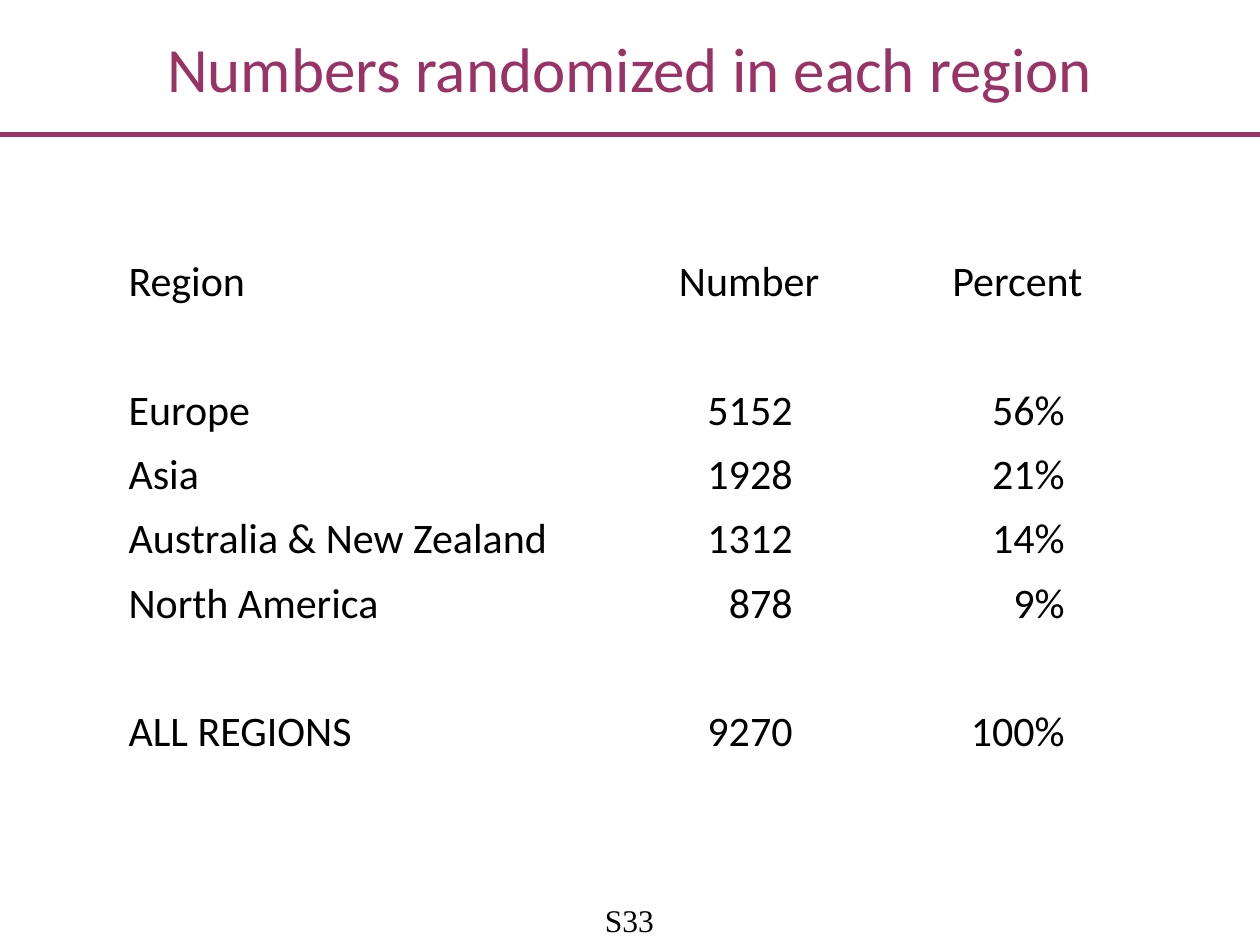
from pptx import Presentation
from pptx import util as u
from pptx.dml.color import RGBColor
from pptx.enum import shapes, text
from pptx.oxml.ns import qn
from lxml import etree

TITLE = "Numbers randomized in each region"
PAGE = "S33"
ROWS = [
    ("Region", "Number", "Percent"),
    ("", "", ""),
    ("Europe", "5152", "56%"),
    ("Asia", "1928", "21%"),
    ("Australia & New Zealand", "1312", "14%"),
    ("North America", "878", "9%"),
    ("", "", ""),
    ("ALL REGIONS", "9270", "100%"),
]
COLUMNS = [3.96, 2.13, 2.13]
RIGHT_MARGINS = [0.1, 0.72, 0.69]
COLORS = {"accent": "993366", "text": "000000"}
W, H = 10, 7.5
HEADER_H = 1.07
TABLE_LEFT, TABLE_TOP, ROW_H = 0.92, 1.99, 0.51
ALIGN = text.PP_ALIGN


def add_run(p, content, size, font, color, align):
    p.alignment = align
    r = p.add_run()
    r.text = content
    r.font.size = u.Pt(size)
    r.font.name = font
    r.font.bold = False
    r.font.color.rgb = RGBColor.from_string(COLORS[color])


def add_label(s, box, content, size, font, color, wrap, margin):
    sp = s.shapes.add_textbox(*[u.Inches(v) for v in box])
    tf = sp.text_frame
    tf.word_wrap = wrap
    tf.vertical_anchor = text.MSO_ANCHOR.MIDDLE
    tf.margin_left = tf.margin_right = u.Inches(margin)
    tf.margin_top = tf.margin_bottom = u.Inches(margin / 2)
    add_run(tf.paragraphs[0], content, size, font, color, ALIGN.CENTER)


def add_rule(s):
    line = s.shapes.add_connector(
        shapes.MSO_CONNECTOR.STRAIGHT,
        0, u.Inches(HEADER_H), u.Inches(W), u.Inches(HEADER_H))
    line.line.color.rgb = RGBColor.from_string(COLORS["accent"])
    line.line.width = u.Pt(3)
    etree.SubElement(line._element.spPr, qn("a:effectLst"))


def add_regions(s):
    table = s.shapes.add_table(
        len(ROWS), len(COLUMNS), u.Inches(TABLE_LEFT), u.Inches(TABLE_TOP),
        u.Inches(sum(COLUMNS)), u.Inches(ROW_H * len(ROWS))).table
    table.first_row = table.horz_banding = False
    for column, width in zip(table.columns, COLUMNS):
        column.width = u.Inches(width)
    for i, row in enumerate(ROWS):
        table.rows[i].height = u.Inches(ROW_H)
        for j, value in enumerate(row):
            cell = table.cell(i, j)
            cell.fill.background()
            p = cell.text_frame.paragraphs[0]
            if not value:
                p.font.size = u.Pt(24)
                continue
            align = ALIGN.LEFT
            if j:
                align = ALIGN.RIGHT if i else ALIGN.CENTER
            if align == ALIGN.RIGHT:
                cell.margin_right = u.Inches(RIGHT_MARGINS[j])
            add_run(p, value, 24, "Calibri", "text", align)


def main():
    prs = Presentation()
    prs.slide_width, prs.slide_height = u.Inches(W), u.Inches(H)
    s = prs.slides.add_slide(prs.slide_layouts[6])
    add_rule(s)
    add_label(s, (4.78, 7.15, 0.43, 0.3), PAGE, 18, "Times New Roman", "text", False, 0)
    add_label(s, (0, 0, W, HEADER_H), TITLE, 36, "Calibri", "accent", True, 0.1)
    add_regions(s)
    prs.save("out.pptx")


if __name__ == "__main__":
    main()
